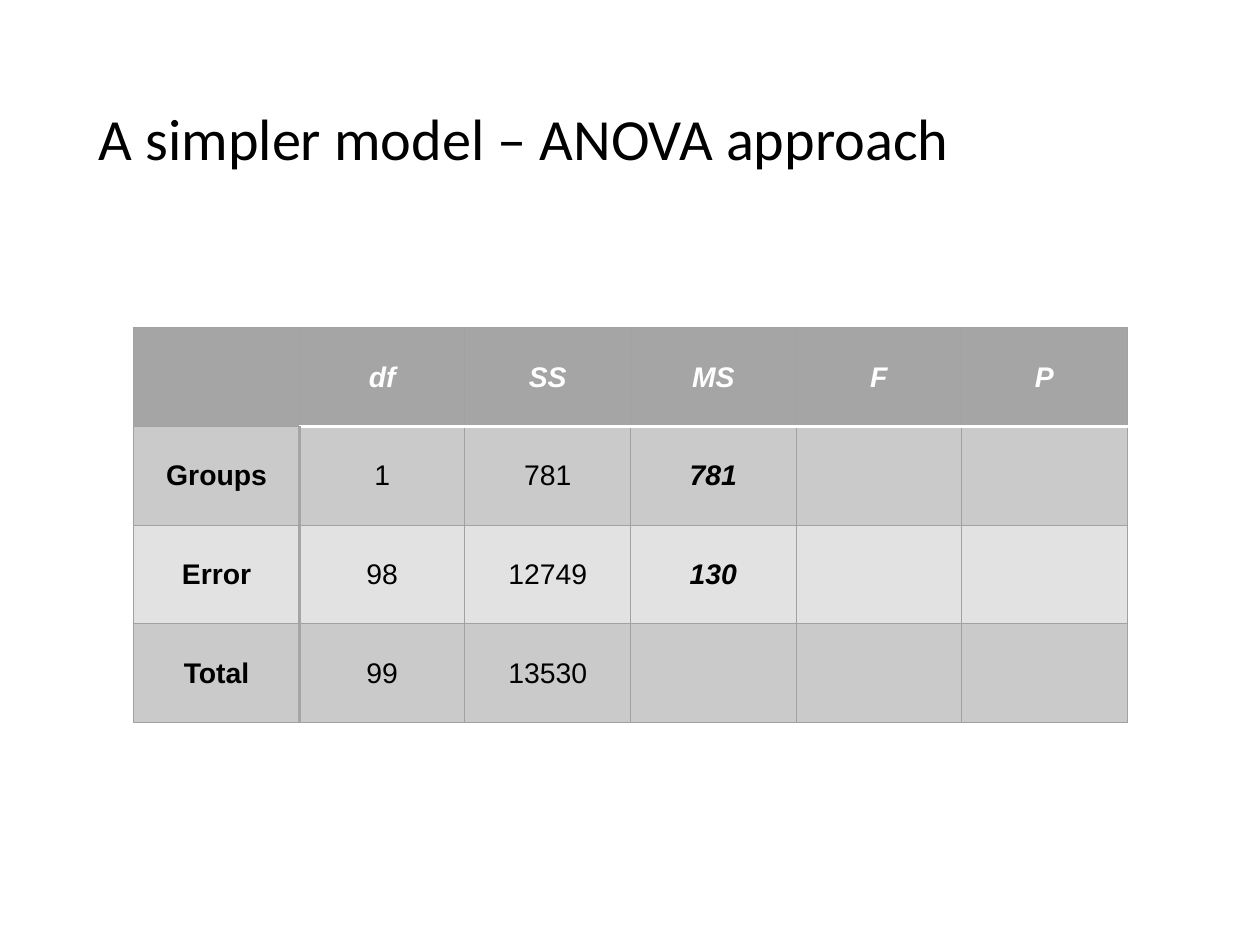
from dataclasses import dataclass

from lxml.etree import SubElement
from pptx import Presentation
from pptx.dml.color import RGBColor
from pptx.enum.text import MSO_ANCHOR as Anchor, PP_ALIGN as Align
from pptx.oxml.ns import qn
from pptx.slide import Slide
from pptx.table import Table, _Cell as Cell
from pptx.text.text import _Paragraph as Paragraph
from pptx.util import Inches, Pt


@dataclass(frozen=True)
class Line:
    color: str
    width: float


@dataclass(frozen=True)
class TextStyle:
    font: str
    size: float
    color: str = "000000"
    bold: bool = False
    italic: bool = False


@dataclass(frozen=True)
class TableRow:
    texts: tuple[str, ...]
    fill: str


GRID = Line("A1A1A1", 0.75)
HEADER_RULE = Line("FFFFFF", 2)
LABEL_RULE = Line("A5A5A5", 2)

TITLE = TextStyle("Calibri", 37)
HEADER = TextStyle("Arial", 18, "FFFFFF", bold=True, italic=True)
LABEL = TextStyle("Arial", 18, bold=True)
VALUE = TextStyle("Arial", 18)
MEAN_SQUARE = TextStyle("Arial", 18, bold=True, italic=True)
MEAN_SQUARE_COLUMN = 3

ANOVA_ROWS = (
    TableRow(("", "df", "SS", "MS", "F", "P"), "A5A5A5"),
    TableRow(("Groups", "1", "781", "781", "", ""), "CACACA"),
    TableRow(("Error", "98", "12749", "130", "", ""), "E2E2E2"),
    TableRow(("Total", "99", "13530", "", "", ""), "CACACA"),
)
COLUMN_WIDTH, ROW_HEIGHT = 1.46, 0.87


def rgb(color: str) -> RGBColor:
    return RGBColor.from_string(color)


def add_run(paragraph: Paragraph, text: str, style: TextStyle) -> None:
    run = paragraph.add_run()
    run.text = text
    run.font.name = style.font
    run.font.size = Pt(style.size)
    run.font.bold = style.bold
    run.font.italic = style.italic
    run.font.color.rgb = rgb(style.color)


def add_title(slide: Slide, text: str) -> None:
    shape = slide.shapes.add_textbox(Inches(0.76), Inches(0.44), Inches(9.58), Inches(1.61))
    frame = shape.text_frame
    frame.word_wrap = True
    frame.vertical_anchor = Anchor.MIDDLE
    frame.margin_left = frame.margin_right = Inches(0.11)
    frame.margin_top = frame.margin_bottom = Inches(0.11)
    paragraph = frame.paragraphs[0]
    paragraph.line_spacing = 0.9
    add_run(paragraph, text, TITLE)


def set_border(cell: Cell, side: str, line: Line) -> None:
    properties = cell._tc.get_or_add_tcPr()
    border = SubElement(properties, qn(f"a:ln{side}"), w=str(Pt(line.width)))
    fill = SubElement(border, qn("a:solidFill"))
    SubElement(fill, qn("a:srgbClr"), val=line.color)


def cell_style(row: int, column: int) -> TextStyle:
    if row == 0:
        return HEADER
    if column == 0:
        return LABEL
    return MEAN_SQUARE if column == MEAN_SQUARE_COLUMN else VALUE


def row_rule(edge: int, column: int) -> Line:
    """Line above the row numbered edge."""
    return HEADER_RULE if edge == 1 and column > 0 else GRID


def column_rule(edge: int, row: int) -> Line:
    """Line to the left of the column numbered edge."""
    return LABEL_RULE if edge == 1 and row > 0 else GRID


def fill_cell(table: Table, row: int, column: int) -> None:
    cell = table.cell(row, column)
    cell.vertical_anchor = Anchor.MIDDLE
    # Borders come before the fill in the cell properties
    set_border(cell, "L", column_rule(column, row))
    set_border(cell, "R", column_rule(column + 1, row))
    set_border(cell, "T", row_rule(row, column))
    set_border(cell, "B", row_rule(row + 1, column))
    cell.fill.solid()
    cell.fill.fore_color.rgb = rgb(ANOVA_ROWS[row].fill)
    text = ANOVA_ROWS[row].texts[column]
    if text:
        paragraph = cell.text_frame.paragraphs[0]
        paragraph.alignment = Align.CENTER
        add_run(paragraph, text, cell_style(row, column))


def add_anova_table(slide: Slide) -> None:
    row_count, column_count = len(ANOVA_ROWS), len(ANOVA_ROWS[0].texts)
    table = slide.shapes.add_table(
        row_count, column_count, Inches(1.18), Inches(2.89),
        Inches(COLUMN_WIDTH * column_count), Inches(ROW_HEIGHT * row_count),
    ).table
    for row in range(row_count):
        for column in range(column_count):
            fill_cell(table, row, column)


def main() -> None:
    presentation = Presentation()
    presentation.slide_width = Inches(11.11)
    presentation.slide_height = Inches(8.33)
    slide = presentation.slides.add_slide(presentation.slide_layouts[6])

    # Title
    add_title(slide, "A simpler model – ANOVA approach")

    # ANOVA table
    add_anova_table(slide)

    presentation.save("out.pptx")


if __name__ == "__main__":
    main()
